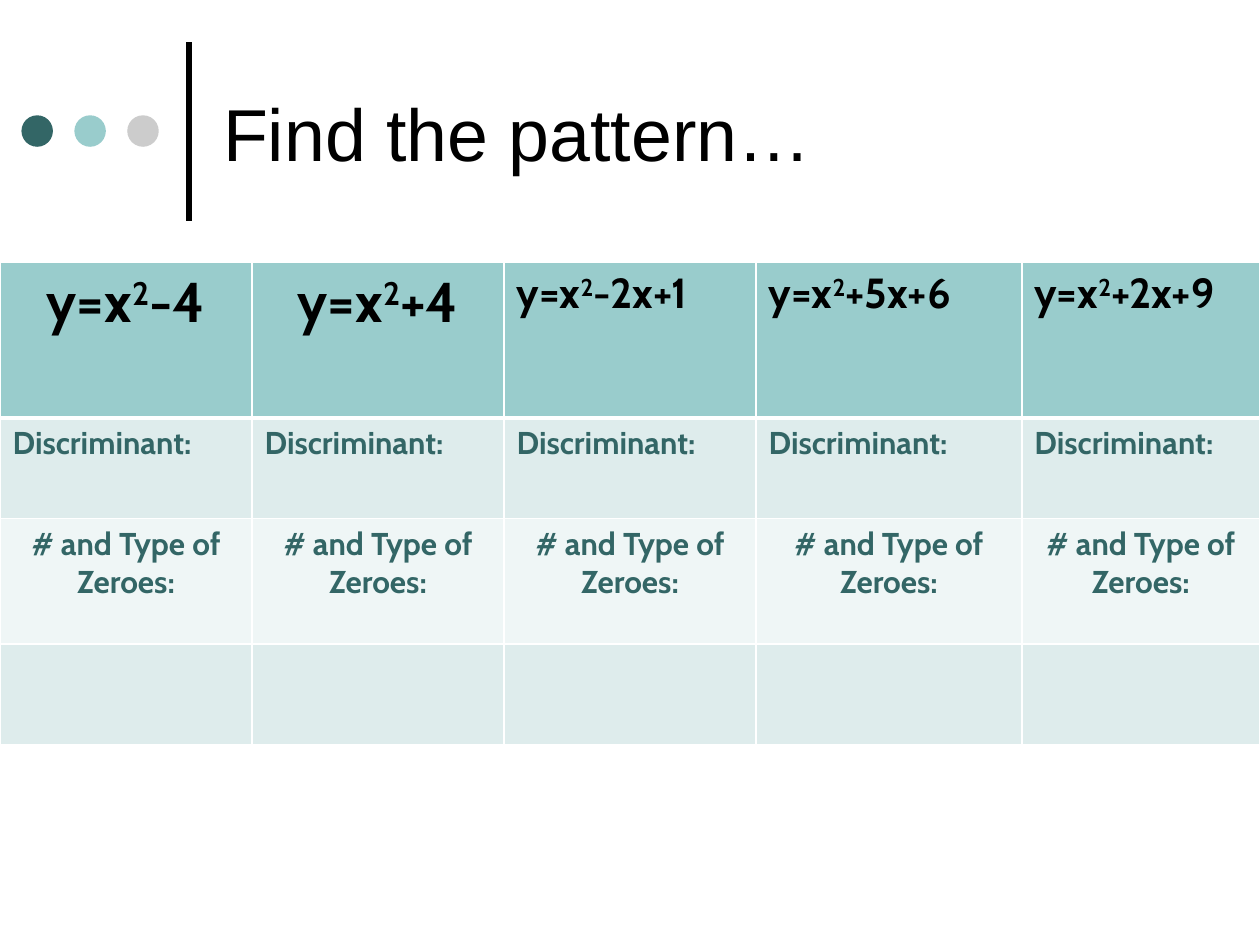
from lxml import etree
from pptx import Presentation, util as u
from pptx.dml.color import RGBColor
from pptx.enum import shapes, text
from pptx.oxml.ns import qn

COLORS = {
    "ink": "000000", "deep": "336666", "teal": "99CCCC", "gray": "CCCCCC",
    "band": "DEECEC", "pale": "EFF6F6", "white": "FFFFFF",
}
EQUATIONS = [("-4", 32), ("+4", 32), ("-2x+1", 24), ("+5x+6", 24), ("+2x+9", 24)]
COLUMN_WIDTHS = [2, 2, 2, 2.11, 1.89]
ROW_HEIGHTS = [1.24, 0.8, 1, 0.8]


def color(name):
    return RGBColor.from_string(COLORS[name])


def style_span(span, size, name, face="Cabin", bold=True):
    span.font.size = u.Pt(size)
    span.font.name = face
    span.font.bold = bold
    span.font.color.rgb = color(name)


def add_ornament(page, left, top, width, height):
    diameter = 0.25
    pitch = 0.42
    for index, name in enumerate(["deep", "teal", "gray"]):
        dot = page.shapes.add_shape(
            shapes.MSO_SHAPE.OVAL, u.Inches(left + index * pitch),
            u.Inches(top + (height - diameter) / 2),
            u.Inches(diameter), u.Inches(diameter))
        dot.shadow.inherit = False
        dot.fill.solid()
        dot.fill.fore_color.rgb = color(name)
        dot.line.fill.background()
    right = u.Inches(left + width)
    rule = page.shapes.add_connector(
        shapes.MSO_CONNECTOR.STRAIGHT, right, u.Inches(top + height), right, u.Inches(top))
    rule.line.width = u.Pt(3)
    rule.line.color.rgb = color("ink")
    etree.SubElement(rule._element.spPr, qn("a:effectLst"))


def add_title(page, left, top, width, height):
    title = page.shapes.title
    title.left, title.top, title.width, title.height = map(
        u.Inches, (left, top, width, height))
    frame = title.text_frame
    frame.text = "Find the pattern…"
    frame.vertical_anchor = text.MSO_ANCHOR.MIDDLE
    para = frame.paragraphs[0]
    para.alignment = text.PP_ALIGN.LEFT
    style_span(para.runs[0], 42, "ink", "Arial", False)


def paint_cell(cell, fill, widths):
    cell.fill.solid()
    cell.fill.fore_color.rgb = color(fill)
    properties = cell._tc.get_or_add_tcPr()
    for index, (side, points) in enumerate(widths.items()):
        border = etree.Element(qn(f"a:ln{side}"), w=str(u.Pt(points)))
        solid = etree.SubElement(border, qn("a:solidFill"))
        etree.SubElement(solid, qn("a:srgbClr"), val=COLORS["white"])
        properties.insert(index, border)


def write_equation(cell, ending, size):
    para = cell.text_frame.paragraphs[0]
    para.alignment = text.PP_ALIGN.CENTER if size == 32 else text.PP_ALIGN.LEFT
    for part in ["y=x", "2", ending]:
        span = para.add_run()
        span.text = part
        style_span(span, size, "ink")
        if part == "2":
            span._r.get_or_add_rPr().set("baseline", "30000")


def write_label(cell, label, alignment):
    cell.text_frame.text = label
    para = cell.text_frame.paragraphs[0]
    para.alignment = alignment
    style_span(para.runs[0], 18, "deep")


def add_pattern_table(page, left, top, width, height):
    table = page.shapes.add_table(
        len(ROW_HEIGHTS), len(COLUMN_WIDTHS), u.Inches(left), u.Inches(top),
        u.Inches(width), u.Inches(height)).table
    for column, share in zip(table.columns, COLUMN_WIDTHS):
        column.width = u.Inches(width * share / sum(COLUMN_WIDTHS))
    for row, share in zip(table.rows, ROW_HEIGHTS):
        row.height = u.Inches(height * share / sum(ROW_HEIGHTS))
    fills = ["teal", "band", "pale", "band"]
    for row_index, fill in enumerate(fills):
        widths = {"L": 1, "R": 1, "T": 3 if row_index == 1 else 1,
                  "B": 3 if row_index == 0 else 1}
        for cell in table.rows[row_index].cells:
            paint_cell(cell, fill, widths)
    for index, (ending, size) in enumerate(EQUATIONS):
        write_equation(table.cell(0, index), ending, size)
        write_label(table.cell(1, index), "Discriminant:", text.PP_ALIGN.LEFT)
        write_label(table.cell(2, index), "# and Type of Zeroes:", text.PP_ALIGN.CENTER)


def main():
    deck = Presentation()
    deck.slide_width, deck.slide_height = u.Inches(10), u.Inches(7.5)
    page = deck.slides.add_slide(deck.slide_layouts[5])
    add_ornament(page, 0.17, 0.33, 1.33, 1.42)
    add_title(page, 1.67, 0.21, 7.67, 1.67)
    add_pattern_table(page, 0, 2.08, 10, 3.83)
    deck.save("out.pptx")


if __name__ == "__main__":
    main()
